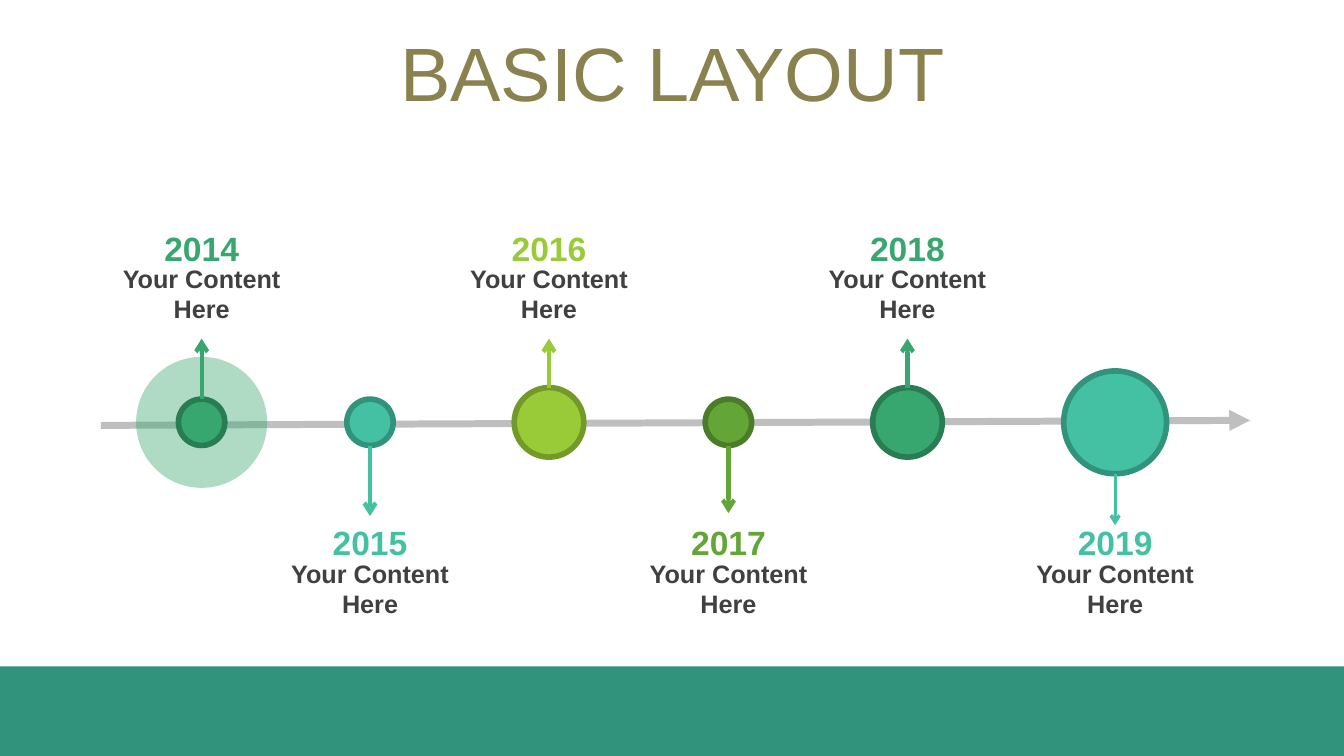
from dataclasses import dataclass

from lxml import etree
from pptx import Presentation
from pptx.dml.color import RGBColor
from pptx.enum.shapes import MSO_CONNECTOR, MSO_SHAPE
from pptx.enum.text import MSO_ANCHOR, MSO_AUTO_SIZE, PP_ALIGN
from pptx.oxml.ns import qn
from pptx.util import Inches, Pt

OVAL = MSO_SHAPE.OVAL
RECT = MSO_SHAPE.RECTANGLE
LINE = MSO_CONNECTOR.STRAIGHT
CENTER = PP_ALIGN.CENTER
MIDDLE = MSO_ANCHOR.MIDDLE
GROW = MSO_AUTO_SIZE.SHAPE_TO_FIT_TEXT

CELL = 0.1
COLS, ROWS = 133.3, 75
MID = 41.9
WIDE = 22.1
HIGH, LOW = 22.1, 51.3


@dataclass(frozen=True)
class Theme:
    font: str = "Arial"
    title: str = "89814E"
    text: str = "404040"
    axis: str = "BFBFBF"
    teal: str = "44C1A3"
    deep: str = "31937B"
    green: str = "37A76F"
    pine: str = "297D53"
    leaf: str = "63A537"
    moss: str = "4A7C29"
    lime: str = "99CB38"
    olive: str = "739A28"
    head: float = 54
    year: float = 24
    note: float = 18


THEME = Theme()

STOPS = [
    ("2014", 20, 4.6, THEME.green, THEME.pine, 33.6, 3),
    ("2015", 36.7, 4.6, THEME.teal, THEME.deep, 51.2, 3),
    ("2016", 54.45, 6.9, THEME.lime, THEME.olive, 33.6, 3),
    ("2017", 72.25, 4.6, THEME.leaf, THEME.moss, 50.9, 3),
    ("2018", 90, 6.9, THEME.green, THEME.pine, 33.6, 3),
    ("2019", 110.6, 10.2, THEME.teal, THEME.deep, 52.1, 2.25),
]


def grid(*cells):
    return [Inches(cell * CELL) for cell in cells]


def tint(color):
    return RGBColor.from_string(color)


def stroke(line, color, width):
    line.color.rgb = tint(color)
    line.width = Pt(width)


def add_tip(shape, kind):
    line = shape._element.spPr.find(qn("a:ln"))
    etree.SubElement(line, qn("a:tailEnd")).set("type", kind)


def add_block(shapes, kind, box, fill):
    block = shapes.add_shape(kind, *grid(*box))
    block.shadow.inherit = False
    block.fill.solid()
    block.fill.fore_color.rgb = tint(fill)
    block.line.fill.background()
    return block


def add_dot(shapes, x, size, fill):
    box = (x - size / 2, MID - size / 2, size, size)
    return add_block(shapes, OVAL, box, fill)


def add_halo(shapes, x, size, fill, share):
    halo = add_dot(shapes, x, size, fill)
    color = halo._element.spPr.find(".//" + qn("a:srgbClr"))
    etree.SubElement(color, qn("a:alpha")).set("val", str(share * 1000))


def add_axis(shapes):
    left, top, right, end = grid(10, 42.2, 124, 41.7)
    pen = shapes.build_freeform(left, top)
    pen.add_line_segments([(right, end)], close=False)
    axis = pen.convert_to_shape()
    axis.shadow.inherit = False
    axis.fill.background()
    stroke(axis.line, THEME.axis, 5)
    add_tip(axis, "triangle")


def add_arrow(shapes, x, start, end, color, width):
    arrow = shapes.add_connector(LINE, *grid(x, start, x, end))
    stroke(arrow.line, color, width)
    add_tip(arrow, "arrow")
    etree.SubElement(arrow._element.spPr, qn("a:effectLst"))


def add_text(shapes, box, words, size, color, bold=False):
    frame = shapes.add_textbox(*grid(*box)).text_frame
    frame.word_wrap = True
    para = frame.paragraphs[0]
    para.alignment = CENTER
    run = para.add_run()
    run.text = words
    run.font.name = THEME.font
    run.font.size = Pt(size)
    run.font.bold = bold
    run.font.color.rgb = tint(color)
    return frame


def add_label(shapes, x, top, year, color):
    group = shapes.add_group_shape().shapes
    left = x - WIDE / 2
    lines = [
        (top, 5, year, THEME.year, color),
        (top + 3.55, 7.1, "Your Content Here", THEME.note, THEME.text),
    ]
    for row, tall, words, size, shade in lines:
        frame = add_text(group, (left, row, WIDE, tall), words, size, shade, True)
        frame.auto_size = GROW


def add_title(shapes):
    frame = add_text(shapes, (3.4, 3.7, 126.6, 7.9), "BASIC LAYOUT", THEME.head, THEME.title)
    frame.vertical_anchor = MIDDLE
    para = frame.paragraphs[0]
    para.line_spacing = 0.9
    para.space_before = Pt(10)


def main():
    deck = Presentation()
    deck.slide_width, deck.slide_height = grid(COLS, ROWS)
    shapes = deck.slides.add_slide(deck.slide_layouts[6]).shapes
    add_block(shapes, RECT, (0, 66.1, COLS, 8.9), THEME.deep)
    add_axis(shapes)
    add_halo(shapes, 20, 13, THEME.green, 40)
    for year, x, size, fill, edge, tip, width in STOPS:
        dot = add_dot(shapes, x, size, fill)
        stroke(dot.line, edge, 4)
        above = tip < MID
        start = MID - size / 2 if above else MID + size / 2
        add_arrow(shapes, x, start, tip, fill, width)
        add_label(shapes, x, HIGH if above else LOW, year, fill)
    add_title(shapes)
    deck.save("out.pptx")


if __name__ == "__main__":
    main()
